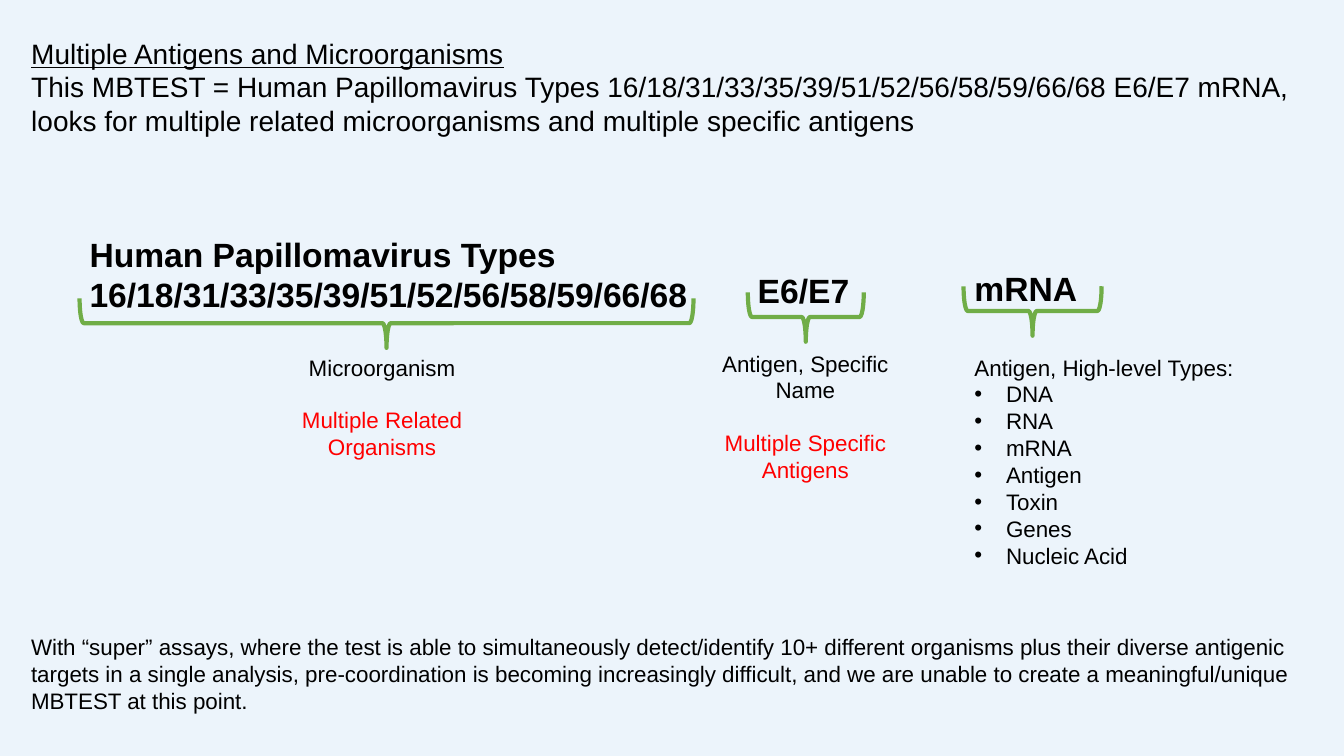
from dataclasses import dataclass

from lxml.etree import SubElement
from pptx import Presentation
from pptx.dml.color import RGBColor
from pptx.enum.shapes import MSO_SHAPE as Preset
from pptx.enum.text import MSO_ANCHOR as Anchor, MSO_AUTO_SIZE as AutoSize, PP_ALIGN as Align
from pptx.oxml.ns import qn
from pptx.util import Pt


@dataclass(frozen=True)
class Theme:
    font: str = "Arial"
    background: RGBColor = RGBColor(0xEC, 0xF4, 0xFB)
    ink: RGBColor = RGBColor(0, 0, 0)
    accent: RGBColor = RGBColor(0xFF, 0, 0)
    brace: RGBColor = RGBColor(0x70, 0xAD, 0x47)
    term_size: int = 24
    title_size: int = 20
    body_size: int = 16
    line_gap: float = 18.4
    brace_depth: float = 35.3
    brace_weight: float = 3
    bullet_indent: float = 22.5


THEME = Theme()


def place(shape, left, top, width, height):
    shape.left, shape.top = Pt(left), Pt(top)
    shape.width, shape.height = Pt(width), Pt(height)


def prepare_frame(box):
    frame = box.text_frame
    frame.word_wrap = True
    frame.auto_size = AutoSize.NONE
    frame.vertical_anchor = Anchor.TOP
    return frame


def add_box(page, left, top, width, height):
    return prepare_frame(page.shapes.add_textbox(Pt(left), Pt(top), Pt(width), Pt(height)))


def add_para(frame, text, size, color=THEME.ink, align=Align.LEFT,
             bold=False, underline=False):
    """Fill the frame's empty first paragraph, or append another one."""
    para = frame.paragraphs[0]
    if para.runs:
        para = frame.add_paragraph()
    para.alignment = align
    span = para.add_run()
    span.text = text
    font = span.font
    font.name, font.size = THEME.font, Pt(size)
    font.bold, font.underline = bold, underline
    font.color.rgb = color
    return para


def add_bullet(para):
    props = para._p.get_or_add_pPr()
    props.set("marL", str(Pt(THEME.bullet_indent)))
    props.set("indent", str(-Pt(THEME.bullet_indent)))
    SubElement(props, qn("a:buFont"), typeface=THEME.font)
    SubElement(props, qn("a:buChar"), char="•")


def add_title(page, heading, statement):
    title = page.shapes.title
    place(title, 15.1, 22.3, 921.6, 79.9)
    frame = prepare_frame(title)
    add_para(frame, heading, THEME.title_size, underline=True)
    add_para(frame, statement, THEME.title_size)


def add_term(page, text, *bounds):
    add_para(add_box(page, *bounds), text, THEME.term_size, bold=True)


def add_brace(page, center_x, center_y, span):
    """Draw a brace that opens upward, its point facing down."""
    depth = THEME.brace_depth
    brace = page.shapes.add_shape(
        Preset.LEFT_BRACE, Pt(center_x - depth / 2), Pt(center_y - span / 2),
        Pt(depth), Pt(span))
    brace.rotation = 270
    brace.shadow.inherit = False
    brace.fill.background()
    brace.line.color.rgb = THEME.brace
    brace.line.width = Pt(THEME.brace_weight)


def add_caption(page, label, finding, *bounds):
    frame = add_box(page, *bounds)
    add_para(frame, label, THEME.body_size, align=Align.CENTER)
    para = add_para(frame, finding, THEME.body_size, THEME.accent, Align.CENTER)
    para.space_before = Pt(THEME.line_gap)


def add_list(page, label, items, *bounds):
    frame = add_box(page, *bounds)
    add_para(frame, label, THEME.body_size)
    for item in items:
        add_bullet(add_para(frame, item, THEME.body_size))


def main():
    deck = Presentation()
    deck.slide_width, deck.slide_height = Pt(960), Pt(540)
    page = deck.slides.add_slide(deck.slide_layouts[5])
    page.background.fill.solid()
    page.background.fill.fore_color.rgb = THEME.background

    add_title(page, "Multiple Antigens and Microorganisms",
              "This MBTEST = Human Papillomavirus Types "
              "16/18/31/33/35/39/51/52/56/58/59/66/68 E6/E7 mRNA, looks for "
              "multiple related microorganisms and multiple specific antigens")

    # Microorganism
    add_term(page, "Human Papillomavirus Types 16/18/31/33/35/39/51/52/56/58/59/66/68",
             56.9, 163.4, 446.4, 65.5)
    add_brace(page, 276.1, 230.8, 438.5)
    add_caption(page, "Microorganism", "Multiple Related Organisms",
                179.3, 249.1, 187.2, 85)

    # Specific antigen
    add_term(page, "E6/E7", 534.2, 189.4, 98.6, 36)
    add_brace(page, 575.6, 226.4, 82.8)
    add_caption(page, "Antigen, Specific Name", "Multiple Specific Antigens",
                492.5, 246.2, 165.6, 104.4)

    # High-level antigen type
    add_term(page, "mRNA", 689, 187.9, 98.6, 36)
    add_brace(page, 737.6, 222.1, 98.6)
    add_list(page, "Antigen, High-level Types:",
             ["DNA", "RNA", "mRNA", "Antigen", "Toxin", "Genes", "Nucleic Acid"],
             689, 249.1, 231.8, 162.7)

    # Closing remark
    remark = add_box(page, 15.1, 448.6, 941, 65.5)
    add_para(remark, "With “super” assays, where the test is able to simultaneously "
             "detect/identify 10+ different organisms plus their diverse antigenic "
             "targets in a single analysis, pre-coordination is becoming increasingly "
             "difficult, and we are unable to create a meaningful/unique MBTEST at "
             "this point.", THEME.body_size)

    deck.save("out.pptx")


if __name__ == "__main__":
    main()
